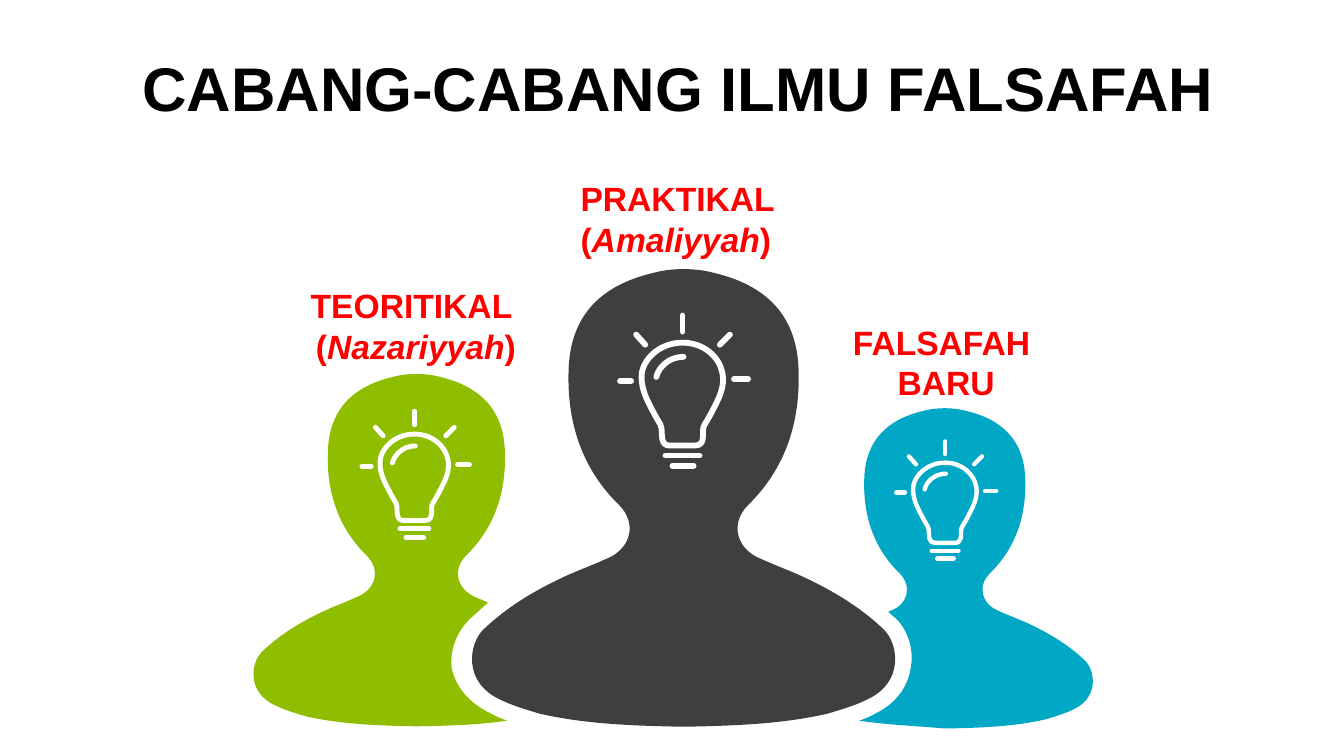
from dataclasses import dataclass

from pptx import Presentation
from pptx.dml.color import RGBColor
from pptx.enum.text import MSO_ANCHOR, MSO_AUTO_SIZE, PP_ALIGN
from pptx.oxml.ns import qn
from pptx.util import Pt

PX = 9144


@dataclass(frozen=True)
class Theme:
    font: str = "Arial"
    title_size: int = 44
    label_size: int = 24
    title: str = "000000"
    label: str = "FF0000"
    center: str = "3F3F3F"
    left: str = "8FBE00"
    right: str = "00A8C6"
    bulb: str = "FFFFFF"


THEME = Theme()

HALF_FIGURE = [
    (0, 0),
    (10, 0), (20, 1), (31, 4),
    (81, 16), (112, 45), (114, 99),
    (116, 150), (102, 197), (64, 234),
    (45, 253), (53, 279), (78, 288),
    (91, 294), (105, 299), (118, 305),
    (148, 319), (175, 335), (199, 358),
    (213, 372), (219, 410), (182, 427),
    (170, 433), (156, 437), (143, 441),
    (99, 451), (55, 453), (0, 454),
]
NECK_POINTS = 12
LEFT_CUT = [
    (447, 720), (476, 719), (503, 715),
    (498, 713), (492, 711), (487, 708),
    (466, 698), (452, 682), (448, 663),
    (446, 646), (452, 628), (466, 614),
    (472, 609), (478, 603), (484, 598),
    (481, 596), (477, 595), (473, 593),
]
RIGHT_CUT = [
    (905, 720), (878, 719), (852, 715),
    (858, 713), (863, 711), (868, 708),
    (887, 699), (900, 683), (903, 664),
    (907, 646), (901, 626), (889, 614),
    (886, 612), (884, 609), (881, 607),
    (882, 606), (882, 606), (883, 606),
]
GLASS = [
    (49, 129),
    (45, 129), (43, 127), (42, 123),
    (41, 118), (42, 112), (40, 108),
    (35, 100), (32, 94), (28, 86),
    (23, 76), (20, 65), (22, 55),
    (25, 42), (40, 27), (62, 27),
    (84, 27), (98, 42), (101, 55),
    (104, 65), (101, 76), (96, 86),
    (92, 94), (89, 100), (84, 108),
    (81, 112), (83, 118), (82, 123),
    (81, 127), (79, 129), (74, 129),
]
SHINE = [(63, 41), (48, 41), (38, 52), (36, 61)]
STROKES = [
    ((62, 0), (62, 16)), ((16, 19), (25, 29)), ((109, 19), (99, 29)),
    ((0, 65), (11, 65)), ((45, 139), (79, 139)), ((52, 149), (73, 149)),
    ((113, 63), (127, 63)),
]


def rgb(value):
    return RGBColor.from_string(value)


def set_attrs(obj, values):
    for name, value in values.items():
        setattr(obj, name, value)


def place(points, x, y, scale, side=1):
    return [(x + side * scale * px, y + scale * py) for px, py in points]


def add_curves(s, contours):
    emu = [[(round(x * PX), round(y * PX)) for x, y in points]
           for points, closed in contours]
    builder = s.shapes.build_freeform(*emu[0][0])
    for i, points in enumerate(emu):
        if i:
            builder.move_to(*points[0])
        builder.add_line_segments(points[1:], close=contours[i][1])
    sp = builder.convert_to_shape()
    sp.shadow.inherit = False
    segments = sp._element.xpath(".//a:lnTo")
    for i in range(0, len(segments), 3):
        curve = segments[i].makeelement(qn("a:cubicBezTo"))
        segments[i].addprevious(curve)
        for segment in segments[i:i + 3]:
            curve.append(segment[0])
            segment.getparent().remove(segment)
    return sp


def add_figure(s, x, y, scale, color, side=1, cut=None):
    outer = place(HALF_FIGURE, x, y, scale, side)
    inner = place(HALF_FIGURE, x, y, scale, -side)
    closing = cut + inner[NECK_POINTS - 1::-1] if cut else inner[-2::-1]
    sp = add_curves(s, [(outer + closing, True)])
    sp.fill.solid()
    sp.fill.fore_color.rgb = rgb(color)
    sp.line.fill.background()


def add_bulb(s, x, y, scale, weight):
    contours = [(GLASS, True), (SHINE, False)]
    contours += [([start, end, end, end], False) for start, end in STROKES]
    sp = add_curves(s, [(place(points, x, y, scale), closed)
                        for points, closed in contours])
    sp.fill.background()
    sp.line.color.rgb = rgb(THEME.bulb)
    sp.line.width = Pt(weight)
    sp.line._get_or_add_ln().set("cap", "rnd")


def add_run(p, text, size, color, italic=False):
    r = p.add_run()
    r.text = text
    set_attrs(r.font, {"name": THEME.font, "size": Pt(size),
                       "bold": True, "italic": italic})
    r.font.color.rgb = rgb(color)


def add_title(s, text, box):
    sp = s.shapes.title
    set_attrs(sp, dict(zip(("left", "top", "width", "height"),
                           (v * PX for v in box))))
    tf = sp.text_frame
    set_attrs(tf, {"margin_left": 0, "margin_top": 0, "margin_right": 0,
                   "margin_bottom": 0, "word_wrap": False,
                   "auto_size": MSO_AUTO_SIZE.NONE,
                   "vertical_anchor": MSO_ANCHOR.TOP})
    p = tf.paragraphs[0]
    set_attrs(p, {"alignment": PP_ALIGN.LEFT, "line_spacing": 1.0,
                  "space_before": Pt(0)})
    add_run(p, text, THEME.title_size, THEME.title)


def add_label(s, box, lines, align):
    tf = s.shapes.add_textbox(*(v * PX for v in box)).text_frame
    set_attrs(tf, {"word_wrap": False,
                   "auto_size": MSO_AUTO_SIZE.SHAPE_TO_FIT_TEXT})
    for i, runs in enumerate(lines):
        p = tf.add_paragraph() if i else tf.paragraphs[0]
        p.alignment = align
        for text, italic in runs:
            add_run(p, text, THEME.label_size, THEME.label, italic)


def term(word):
    return [("(", False), (word, True), (")", False)]


def main():
    prs = Presentation()
    set_attrs(prs, {"slide_width": 1333 * PX, "slide_height": 750 * PX})
    s = prs.slides.add_slide(prs.slide_layouts[5])

    add_figure(s, 678, 267, 1, THEME.center)
    add_figure(s, 937, 405, 0.7, THEME.right, 1, RIGHT_CUT)
    add_figure(s, 413, 371, 0.77, THEME.left, -1, LEFT_CUT)
    add_title(s, "CABANG-CABANG ILMU FALSAFAH", (141, 50, 1073, 148))
    add_bulb(s, 615, 313, 1, 4.13)
    add_bulb(s, 889, 438, 0.78, 3.13)
    add_bulb(s, 359, 408, 0.84, 3.5)
    add_label(s, (297, 278, 231, 91),
              [[("TEORITIKAL ", False)], term("Nazariyyah")], PP_ALIGN.CENTER)
    add_label(s, (566, 172, 223, 91),
              [[("PRAKTIKAL", False)], term("Amaliyyah")], PP_ALIGN.LEFT)
    add_label(s, (835, 314, 207, 91),
              [[("FALSAFAH ", False)], [("BARU", False)]], PP_ALIGN.CENTER)
    prs.save("out.pptx")


if __name__ == "__main__":
    main()
